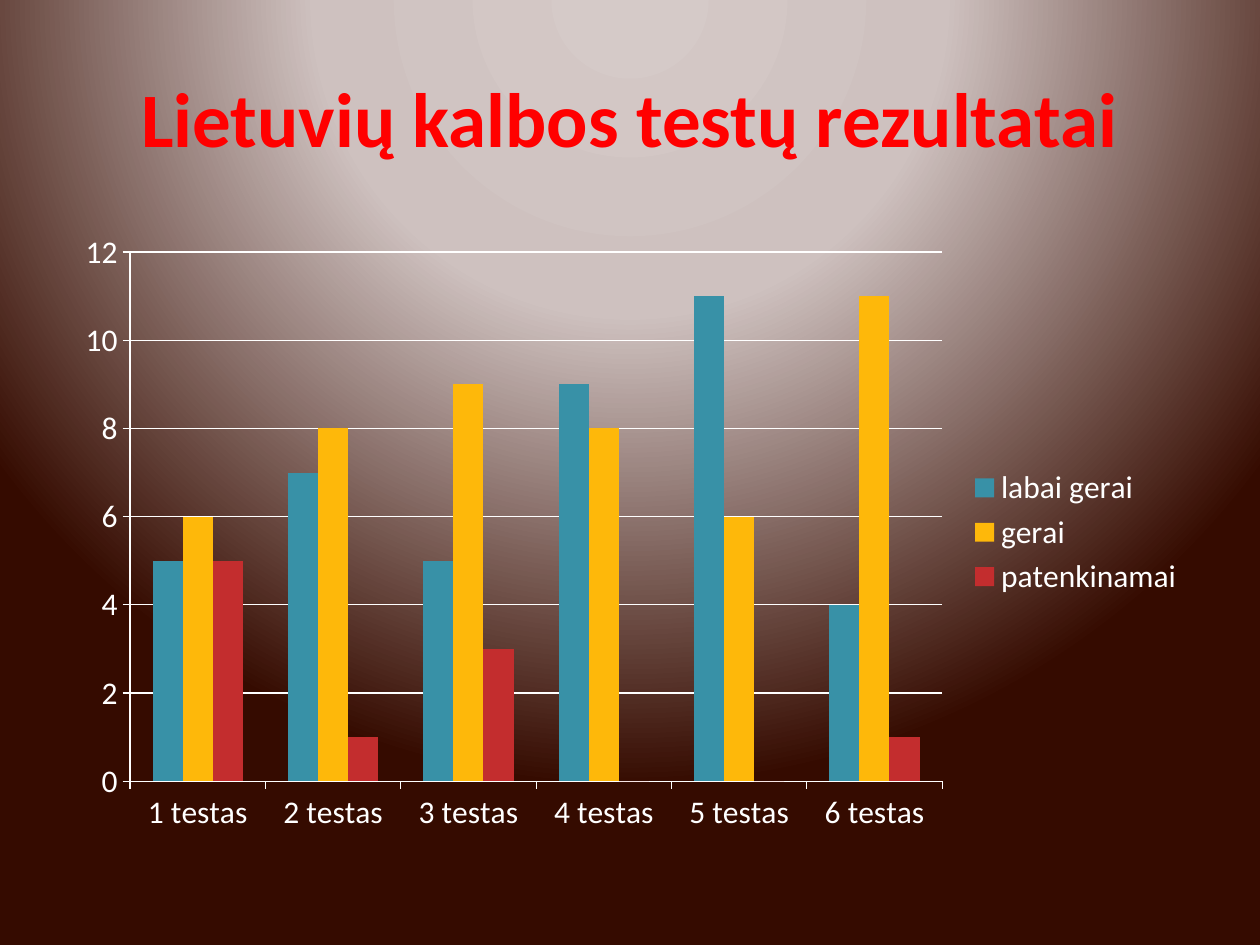
"""Build a slide with a column chart of Lithuanian language test results."""
import pptx
import pptx.chart.data
import pptx.dml.color
import pptx.enum.chart
import pptx.enum.text
import pptx.oxml
import pptx.oxml.ns
import pptx.util

PX = 9144
WHITE = pptx.dml.color.RGBColor(0xFF, 0xFF, 0xFF)
RED = pptx.dml.color.RGBColor(0xFF, 0x00, 0x00)
TEAL = pptx.dml.color.RGBColor(0x38, 0x91, 0xA7)
AMBER = pptx.dml.color.RGBColor(0xFE, 0xB8, 0x0A)
CRIMSON = pptx.dml.color.RGBColor(0xC3, 0x2D, 0x2E)
PALE = pptx.dml.color.RGBColor(0xD5, 0xCA, 0xC8)
ROSE = pptx.dml.color.RGBColor(0xCE, 0xC1, 0xBF)
BROWN = pptx.dml.color.RGBColor(0x35, 0x0B, 0x00)

TESTS = [f"{number} testas" for number in range(1, 7)]
GRADES = [
    ("labai gerai", (5, 7, 5, 9, 11, 4), TEAL),
    ("gerai", (6, 8, 9, 8, 6, 11), AMBER),
    ("patenkinamai", (5, 1, 3, 0, 0, 1), CRIMSON),
]


class ResultsSlide:
    font = "Calibri"

    def __init__(self, slide):
        self.slide = slide

    def box(self, *lengths):
        return [length * PX for length in lengths]

    def style(self, font, size, color, bold=False):
        font.name = self.font
        font.size = pptx.util.Pt(size)
        font.bold = bold
        font.color.rgb = color

    def background(self, stops):
        self.slide.background.fill.solid()
        solid = self.slide.background._cSld.find(".//" + pptx.oxml.ns.qn("a:solidFill"))
        colors = "".join(
            f'<a:gs pos="{percent * 1000}"><a:srgbClr val="{color}"/></a:gs>'
            for percent, color in stops
        )
        glow = pptx.oxml.parse_xml(
            f'<a:gradFill {pptx.oxml.ns.nsdecls("a")} rotWithShape="1"><a:gsLst>{colors}</a:gsLst>'
            '<a:path path="circle"><a:fillToRect l="50000" t="-80000" r="50000" b="180000"/>'
            "</a:path></a:gradFill>"
        )
        solid.getparent().replace(solid, glow)

    def title(self, words, left, top, width, height):
        frame = self.slide.shapes.add_textbox(*self.box(left, top, width, height)).text_frame
        frame.word_wrap = True
        frame.vertical_anchor = pptx.enum.text.MSO_ANCHOR.MIDDLE
        heading = frame.paragraphs[0]
        heading.alignment = pptx.enum.text.PP_ALIGN.CENTER
        run = heading.add_run()
        run.text = words
        self.style(run.font, 44, RED, bold=True)

    def line(self, line):
        line.color.rgb = WHITE
        line.width = pptx.util.Pt(0.75)

    def columns(self, categories, grades, left, top, width, height):
        results = pptx.chart.data.CategoryChartData(number_format="General")
        results.categories = categories
        for name, counts, _ in grades:
            results.add_series(name, counts)
        chart = self.slide.shapes.add_chart(
            pptx.enum.chart.XL_CHART_TYPE.COLUMN_CLUSTERED,
            *self.box(left, top, width, height),
            results,
        ).chart
        self.style(chart.font, 18, WHITE)
        chart.has_title = False
        chart.has_legend = True
        chart.legend.position = pptx.enum.chart.XL_LEGEND_POSITION.RIGHT
        chart.legend.include_in_layout = False
        plot = chart.plots[0]
        plot.vary_by_categories = False
        plot.gap_width = 150
        plot.overlap = 0
        for series, (_, _, color) in zip(plot.series, grades):
            series.format.fill.solid()
            series.format.fill.fore_color.rgb = color
        for axis in (chart.category_axis, chart.value_axis):
            axis.major_tick_mark = pptx.enum.chart.XL_TICK_MARK.OUTSIDE
            self.line(axis.format.line)
        scale = chart.value_axis
        scale.minimum_scale, scale.maximum_scale, scale.major_unit = 0, 12, 2
        scale.has_major_gridlines = True
        self.line(scale.major_gridlines.format.line)


def main():
    deck = pptx.Presentation()
    deck.slide_width, deck.slide_height = 1000 * PX, 750 * PX
    results = ResultsSlide(deck.slides.add_slide(deck.slide_layouts[6]))
    results.background([(0, PALE), (40, ROSE), (100, BROWN)])
    results.title("Lietuvių kalbos testų rezultatai", 50, 30, 900, 125)
    results.columns(TESTS, GRADES, 50, 175, 900, 495)
    deck.save("out.pptx")


if __name__ == "__main__":
    main()
